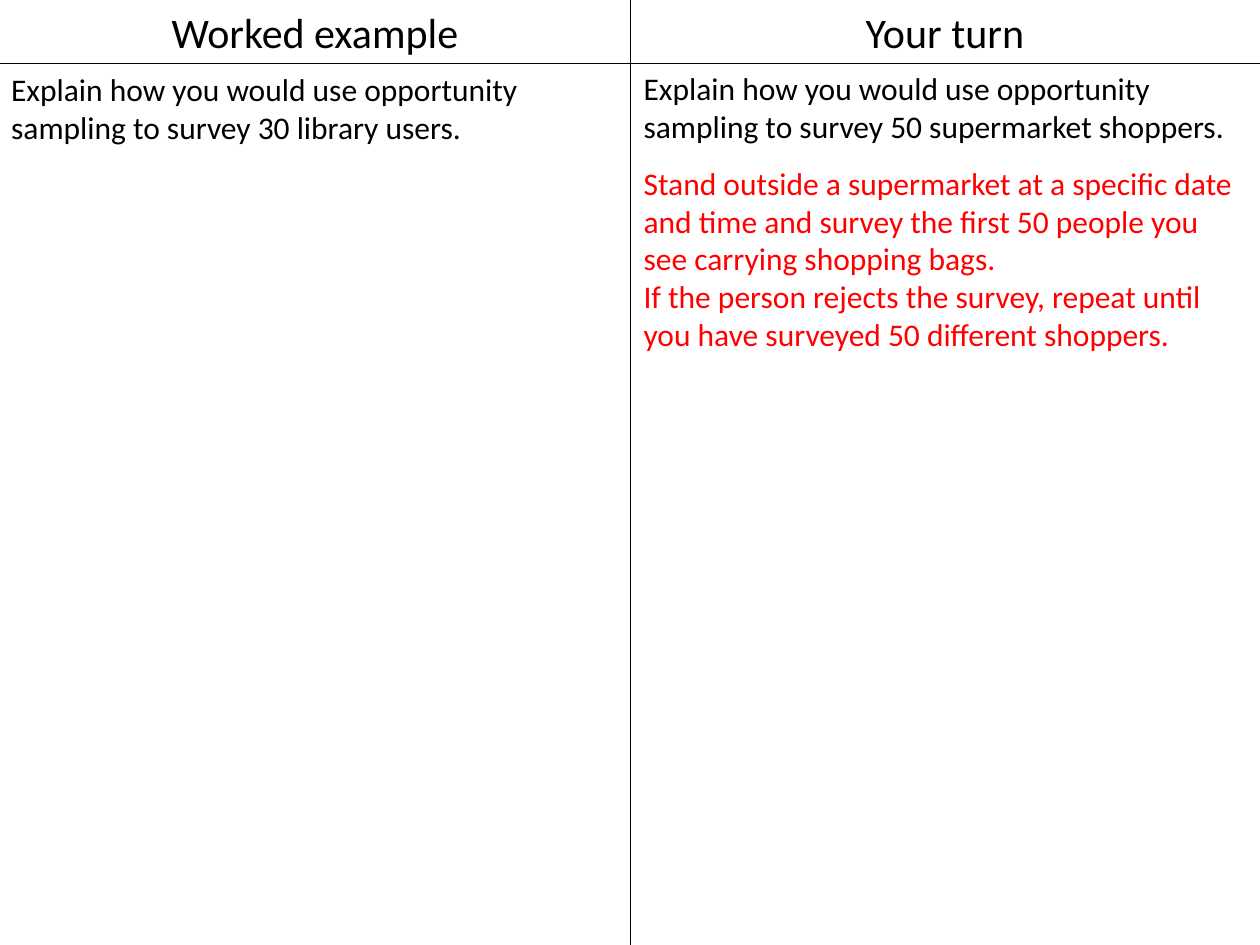
from dataclasses import dataclass
from typing import Any

from lxml import etree
from pptx import Presentation
from pptx.dml.color import RGBColor
from pptx.enum import shapes, text
from pptx.oxml.ns import qn
from pptx.util import Inches, Pt

COLORS = {"ink": "000000", "answer": "FF0000"}
WIDTH, HEIGHT = 10, 7.5
MIDDLE = WIDTH / 2
HEADER = 0.5


def write(frame, content, font="Calibri", size=18, color="ink", align=text.PP_ALIGN.LEFT):
    """Fill a text frame, one paragraph for each line of content."""
    for index, line in enumerate(content.split("\n")):
        para = frame.add_paragraph() if index else frame.paragraphs[0]
        para.alignment = align
        span = para.add_run()
        span.text = line
        span.font.name = font
        span.font.size = Pt(size)
        span.font.color.rgb = RGBColor.from_string(COLORS[color])


@dataclass
class Sheet:
    page: Any
    font: str = "Calibri"
    line_width: float = 0.5

    def rule(self, x1, y1, x2, y2):
        line = self.page.shapes.add_connector(
            shapes.MSO_CONNECTOR.STRAIGHT, Inches(x1), Inches(y1), Inches(x2), Inches(y2))
        line.line.color.rgb = RGBColor.from_string(COLORS["ink"])
        line.line.width = Pt(self.line_width)
        etree.SubElement(line._element.spPr, qn("a:effectLst"))

    def words(self, content, left, top, height, **style):
        box = self.page.shapes.add_textbox(
            Inches(left), Inches(top), Inches(MIDDLE), Inches(height))
        box.text_frame.word_wrap = True
        box.text_frame.auto_size = text.MSO_AUTO_SIZE.SHAPE_TO_FIT_TEXT
        write(box.text_frame, content, font=self.font, **style)

    def heading(self, content, left):
        self.words(content, left, 0, HEADER, size=24, align=text.PP_ALIGN.CENTER)


def main():
    deck = Presentation()
    deck.slide_width, deck.slide_height = Inches(WIDTH), Inches(HEIGHT)
    sheet = Sheet(deck.slides.add_slide(deck.slide_layouts[6]))

    # Dividing lines
    sheet.rule(0, HEADER, WIDTH, HEADER)
    sheet.rule(MIDDLE, 0, MIDDLE, HEIGHT)

    # Column headings
    sheet.heading("Worked example", 0)
    sheet.heading("Your turn", MIDDLE)

    # Questions
    sheet.words("Explain how you would use opportunity sampling to survey 30 library users.",
                -0.01, 0.51, 0.71)
    sheet.words("Explain how you would use opportunity sampling to survey 50 supermarket shoppers.",
                5.01, 0.5, 0.71)

    # Answer
    sheet.words("Stand outside a supermarket at a specific date and time and survey "
                "the first 50 people you see carrying shopping bags.\n"
                "If the person rejects the survey, repeat until you have surveyed "
                "50 different shoppers.",
                5.01, 1.25, 1.62, color="answer")

    deck.save("out.pptx")


if __name__ == "__main__":
    main()
